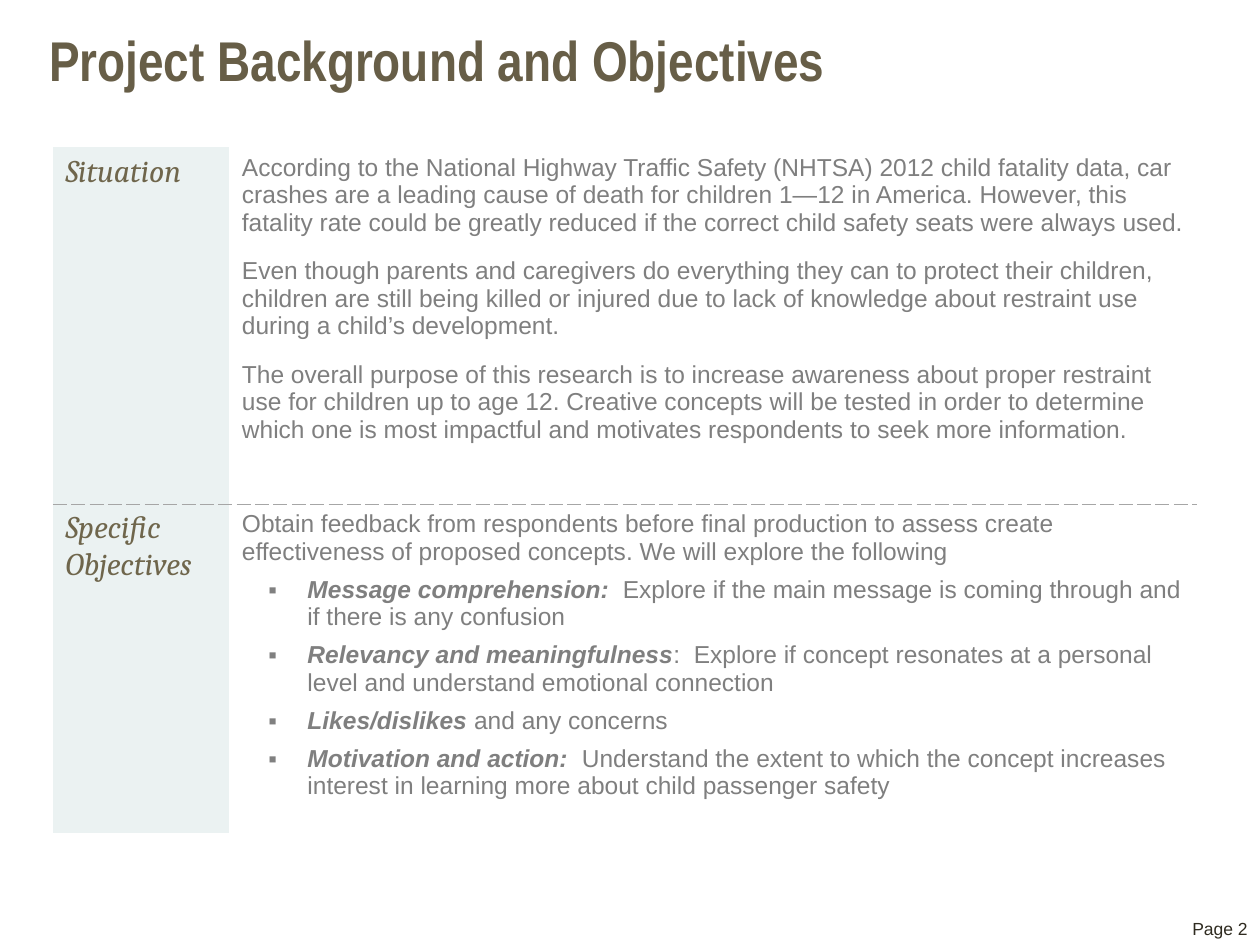
import pptx
import pptx.util
from dataclasses import dataclass
from lxml import etree
from pptx.dml.color import RGBColor
from pptx.enum.text import MSO_ANCHOR, PP_ALIGN
from pptx.oxml import parse_xml
from pptx.oxml.ns import nsdecls, qn
from pptx.util import Inches

BROWN = RGBColor(0x67, 0x5E, 0x47)
LABEL_BROWN = RGBColor(0x6F, 0x66, 0x4C)
INK = RGBColor(0x2F, 0x2B, 0x20)
GREY = RGBColor(0x7F, 0x7F, 0x7F)
BULLET_GREY = RGBColor(0x80, 0x80, 0x80)
RULE_GREY = RGBColor(0xA6, 0xA6, 0xA6)
PALE_GREEN = RGBColor(0xEB, 0xF2, 0xF2)

TITLE = dict(name="Arial Narrow", size=pptx.util.Pt(32), bold=True, color=BROWN)
FOOTER = dict(name="Arial", size=pptx.util.Pt(10), bold=False, color=INK)
LABEL = dict(name="Cambria", size=pptx.util.Pt(18), bold=False, italic=True, color=LABEL_BROWN)
BODY = dict(name="Arial", size=pptx.util.Pt(14), bold=False, italic=False, color=GREY)
LEAD = BODY | dict(bold=True, italic=True)


@dataclass
class Paragraph:
    text: str
    lead: str = ""
    before: float = 0
    after: float = 0


@dataclass
class Section:
    label: str
    height: float
    paragraphs: list[Paragraph]


SECTIONS = [
    Section("Situation", 2.83, [
        Paragraph(text, before=6, after=6) for text in (
            "According to the National Highway Traffic Safety (NHTSA) 2012 child fatality data, "
            "car crashes are a leading cause of death for children 1—12 in America. However, this "
            "fatality rate could be greatly reduced if the correct child safety seats were always used.",
            "Even though parents and caregivers do everything they can to protect their children, "
            "children are still being killed or injured due to lack of knowledge about restraint "
            "use during a child’s development.",
            "The overall purpose of this research is to increase awareness about proper restraint "
            "use for children up to age 12. Creative concepts will be tested in order to determine "
            "which one is most impactful and motivates respondents to seek more information.",
        )]),
    Section("Specific Objectives", 2.61, [
        Paragraph("Obtain feedback from respondents before final production to assess create "
                  "effectiveness of proposed concepts. We will explore the following"),
        Paragraph("Explore if the main message is coming through and if there is any confusion",
                  "Message comprehension:  ", before=6),
        Paragraph(":  Explore if concept resonates at a personal level and understand emotional connection",
                  "Relevancy and meaningfulness", before=6),
        Paragraph("and any concerns", "Likes/dislikes ", before=6),
        Paragraph("Understand the extent to which the concept increases interest in learning more "
                  "about child passenger safety", "Motivation and action:  ", before=6),
    ]),
]


def add_span(para, text: str, style: dict) -> None:
    span = para.add_run()
    span.text = text
    for key, value in style.items():
        if key == "color":
            span.font.color.rgb = value
        else:
            setattr(span.font, key, value)


def add_text(page, text: str, style: dict, place: tuple, **frame_format):
    box = page.shapes.add_textbox(*(Inches(length) for length in place))
    frame = box.text_frame
    for key, value in (dict(word_wrap=True) | frame_format).items():
        setattr(frame, key, value)
    add_span(frame.paragraphs[0], text, style)
    return frame.paragraphs[0]


def add_bullet(para) -> None:
    props = para._p.get_or_add_pPr()
    props.set("lvl", "1")
    props.set("marL", str(Inches(0.52)))
    props.set("indent", str(Inches(-0.31)))
    color = etree.SubElement(props, qn("a:buClr"))
    etree.SubElement(color, qn("a:srgbClr"), val=str(BULLET_GREY))
    etree.SubElement(props, qn("a:buFont"), typeface="Arial")
    etree.SubElement(props, qn("a:buChar"), char="▪")


def set_borders(cell, dashed_side: str) -> None:
    """Dash one side of the cell and clear the others."""
    props = cell._tc.get_or_add_tcPr()
    for index, side in enumerate("LRTB"):
        line = (f'<a:solidFill><a:srgbClr val="{RULE_GREY}"/></a:solidFill><a:prstDash val="dash"/>'
                if side == dashed_side else "<a:noFill/>")
        props.insert(index, parse_xml(
            f'<a:ln{side} {nsdecls("a")} w="{pptx.util.Pt(0.25)}">{line}</a:ln{side}>'))


def fill_body(cell, paragraphs: list[Paragraph]) -> None:
    frame = cell.text_frame
    for index, item in enumerate(paragraphs):
        para = frame.add_paragraph() if index else frame.paragraphs[0]
        para.space_before = pptx.util.Pt(item.before)
        para.space_after = pptx.util.Pt(item.after)
        if item.lead:
            add_bullet(para)
            add_span(para, item.lead, LEAD)
        add_span(para, item.text, BODY)


def add_sections(page) -> None:
    table = page.shapes.add_table(len(SECTIONS), 2, Inches(0.42), Inches(1.17), Inches(9.08),
                                  Inches(sum(section.height for section in SECTIONS))).table
    table.first_row = table.horz_banding = False
    for column, width in zip(table.columns, (1.4, 7.68)):
        column.width = Inches(width)
    for index, section in enumerate(SECTIONS):
        table.rows[index].height = Inches(section.height)
        label, body = table.cell(index, 0), table.cell(index, 1)
        label.fill.solid()
        label.fill.fore_color.rgb = PALE_GREEN
        body.fill.background()
        add_span(label.text_frame.paragraphs[0], section.label, LABEL)
        fill_body(body, section.paragraphs)
        for cell in (label, body):
            set_borders(cell, "T" if index else "B")


def main() -> None:
    deck = pptx.Presentation()
    deck.slide_width, deck.slide_height = Inches(10), Inches(7.5)
    page = deck.slides.add_slide(deck.slide_layouts[6])

    # Title
    add_text(page, "Project Background and Objectives", TITLE, (0.39, 0.2, 7.08, 0.79),
             margin_left=0, margin_right=0, margin_top=0, margin_bottom=0)
    # Situation and objectives
    add_sections(page)
    # Page number
    footer = add_text(page, "Page 2", FOOTER, (6.92, 6.83, 3.08, 0.67),
                      vertical_anchor=MSO_ANCHOR.BOTTOM)
    footer.alignment = PP_ALIGN.RIGHT

    deck.save("out.pptx")


if __name__ == "__main__":
    main()
